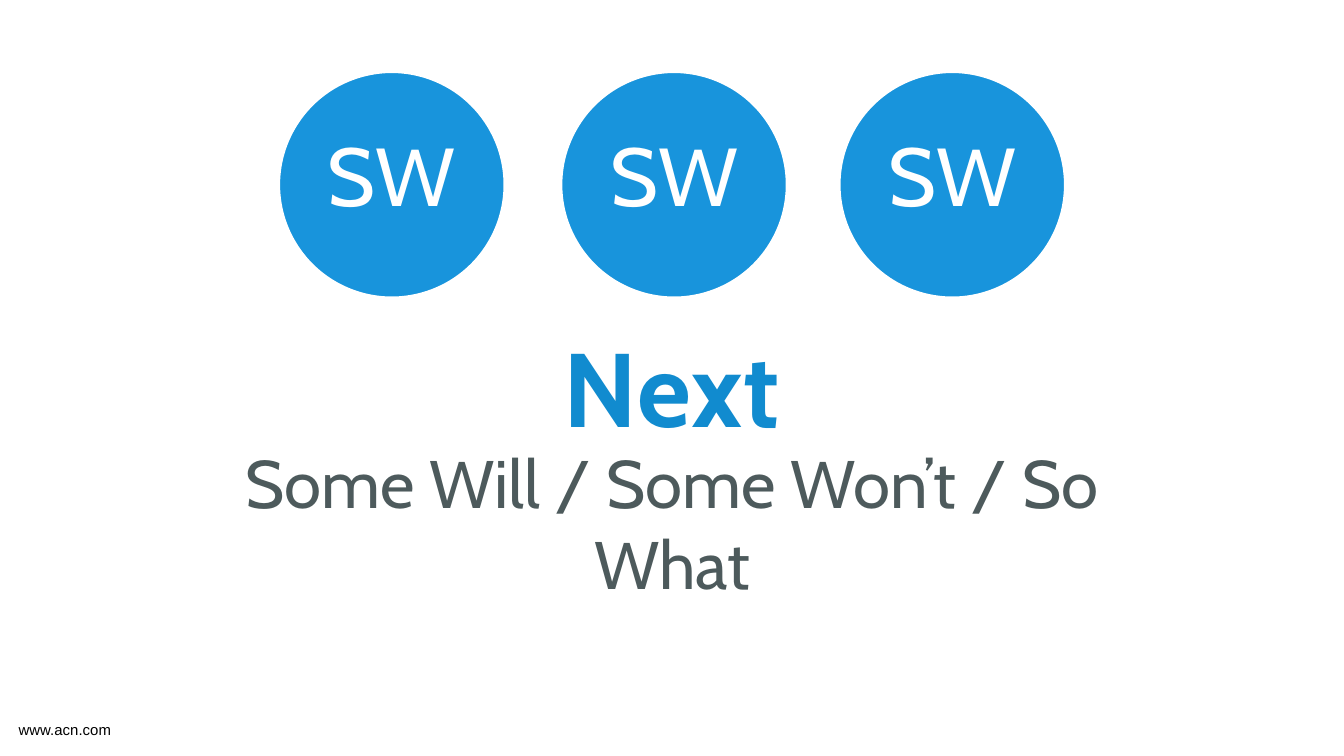
"""Build the SW slide: three circles over a headline and its meaning."""
from dataclasses import dataclass

from pptx import Presentation
from pptx.dml.color import RGBColor
from pptx.enum.shapes import MSO_SHAPE
from pptx.enum.text import MSO_ANCHOR, PP_ALIGN
from pptx.util import Inches, Pt

OVAL = MSO_SHAPE.OVAL
TOP, MIDDLE = MSO_ANCHOR.TOP, MSO_ANCHOR.MIDDLE
LEFT, CENTER = PP_ALIGN.LEFT, PP_ALIGN.CENTER


@dataclass(frozen=True)
class Theme:
    """Colours, fonts and type sizes of the slide."""
    white: str = "FFFFFF"
    black: str = "000000"
    disc: str = "1894DC"
    title: str = "118BCF"
    grey: str = "4D5A5C"
    main: str = "Cabin"
    plain: str = "Arial"
    huge: int = 56
    large: int = 44
    body: int = 36
    small: int = 8


class Painter:
    """Hold the theme and the current slide, and draw elements on it."""

    def __init__(self, slide, theme):
        self.slide = slide
        self.theme = theme

    def text(self, words, box, size, color, face=None, align=CENTER,
             anchor=TOP, inset=None, lines=None, bold=False, track=None):
        """Add a wrapped one-paragraph text box."""
        shape = self.slide.shapes.add_textbox(*map(Inches, box))
        frame = shape.text_frame
        frame.word_wrap = True
        frame.vertical_anchor = anchor
        if inset is not None:
            frame.margin_left = frame.margin_right = Inches(inset)
            frame.margin_top = frame.margin_bottom = Inches(inset)
        para = frame.paragraphs[0]
        para.alignment = align
        para.line_spacing = lines
        run = para.add_run()
        run.text = words
        if track:
            run._r.get_or_add_rPr().set("spc", str(int(track * 100)))
        font = para.font
        font.name = face or self.theme.main
        font.size = Pt(size)
        font.bold = bold
        font.color.rgb = RGBColor.from_string(color)

    def disc(self, words, left, top, size):
        """Add a filled circle with a label across it."""
        look = self.theme
        shape = self.slide.shapes.add_shape(
            OVAL, *map(Inches, (left, top, size, size)))
        shape.shadow.inherit = False
        shape.fill.solid()
        shape.fill.fore_color.rgb = RGBColor.from_string(look.disc)
        shape.line.color.rgb = RGBColor.from_string(look.white)
        shape.line.width = Pt(2)
        self.text(words, (left, top + 0.49, size, 0.72), look.large,
                  look.white, lines=0.8)


def main():
    """Build and save the slide."""
    deck = Presentation()
    deck.slide_width = Inches(10)
    deck.slide_height = Inches(10 * 9 / 16)
    look = Theme()
    pen = Painter(deck.slides.add_slide(deck.slide_layouts[6]), look)
    pen.text("www.acn.com", (0.04, 5.31, 1.65, 0.24), look.small,
             look.black, face=look.plain, align=LEFT)
    pen.text("Next", (0, 2.37, 10, 1.18), look.huge, look.title,
             anchor=MIDDLE, lines=0.8, bold=True, track=0.5)
    pen.text("Some Will / Some Won’t / So What", (1.35, 3.55, 7.3, 0.67),
             look.body, look.grey, anchor=MIDDLE, inset=0.03)
    for left in (2.07, 4.17, 6.24):
        pen.disc("SW", left, 0.53, 1.69)
    deck.save("out.pptx")


if __name__ == "__main__":
    main()
